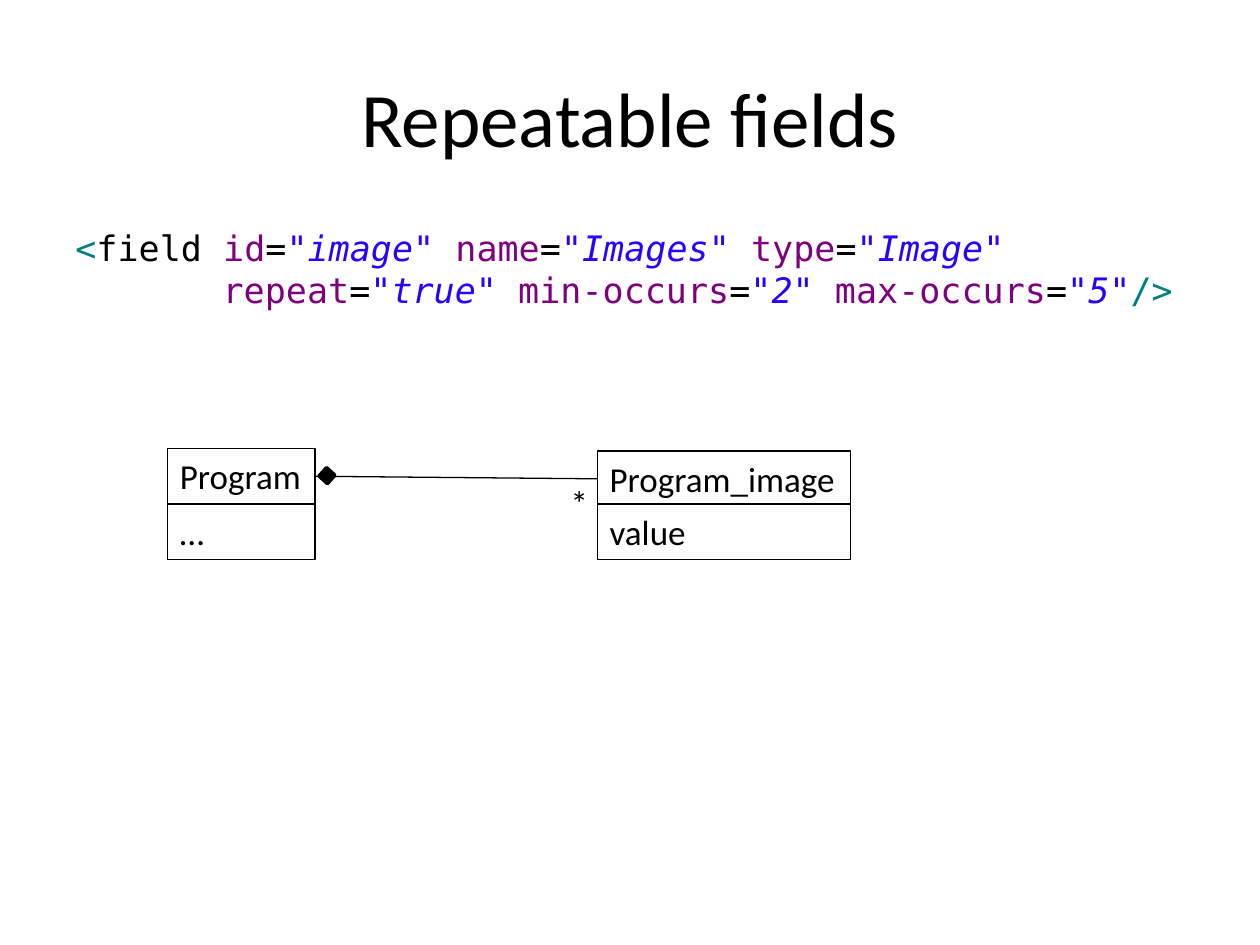
from pptx import Presentation
from pptx.dml.color import RGBColor
from pptx.enum.shapes import MSO_CONNECTOR, MSO_SHAPE
from pptx.enum.text import MSO_ANCHOR, PP_ALIGN
from pptx.oxml.ns import qn
from pptx.util import Inches, Pt
from lxml.etree import SubElement

TITLE = "Repeatable fields"
BLACK, TEAL, PURPLE, BLUE = "000000", "008080", "7F007F", "2A00FF"
SANS, MONO = "Calibri", "DejaVu Sans Mono"

# Code lines: opening runs, attributes, closing runs, indent in characters
CODE = [
    ([("<", TEAL), ("field ", BLACK)],
     [("id", "image"), ("name", "Images"), ("type", "Image")], [], 0),
    ([], [("repeat", "true"), ("min-occurs", "2"), ("max-occurs", "5")],
     [("/>", TEAL)], 7),
]
CHAR_W = 0.167  # width of one code character

# Entities: left, top, width, name, attribute
ENTITIES = [(1.33, 3.56, 1.17, "Program", "…"),
            (4.74, 3.58, 2.01, "Program_image", "value")]
ROW_H, ATTR_TOP = 0.44, 4


def rgb(hex_color):
    return RGBColor.from_string(hex_color)


def box(x, y, w, h):
    return [Inches(v) for v in (x, y, w, h)]


def set_font(p, size, name):
    p.font.size, p.font.name = Pt(size), name
    p.font.color.rgb = rgb(BLACK)


def write(shape, text, size=20, wrap=False, anchor=MSO_ANCHOR.TOP, align=PP_ALIGN.LEFT):
    tf = shape.text_frame
    tf.word_wrap, tf.vertical_anchor = wrap, anchor
    p = tf.paragraphs[0]
    p.text, p.alignment = text, align
    set_font(p, size, SANS)


def add_rect(x, y, w, h, fill, line_width):
    sp = s.shapes.add_shape(MSO_SHAPE.RECTANGLE, *box(x, y, w, h))
    sp.shadow.inherit = False
    sp.fill.solid()
    sp.fill.fore_color.rgb = rgb(fill)
    sp.line.color.rgb = rgb(BLACK)
    sp.line.width = Pt(line_width)
    return sp


prs = Presentation()
prs.slide_width, prs.slide_height = Inches(10), Inches(7.5)
s = prs.slides.add_slide(prs.slide_layouts[6])

# Title
title = s.shapes.add_textbox(*box(0.5, 0.3, 9, 1.25))
write(title, TITLE, 44, True, MSO_ANCHOR.MIDDLE, PP_ALIGN.CENTER)

# Code sample
tf = s.shapes.add_textbox(*box(0.5, 1.75, 9, 4.95)).text_frame
tf.word_wrap = True
for i, (opening, attrs, closing, indent) in enumerate(CODE):
    p = tf.add_paragraph() if i else tf.paragraphs[0]
    p.space_before = Pt(0 if i else 4)
    p._p.get_or_add_pPr().set("marL", str(Inches(indent * CHAR_W)))
    set_font(p, 20, MONO)
    runs = list(opening)
    for n, (name, value) in enumerate(attrs, 1):
        gap = " " if n < len(attrs) else ""
        runs += [(name, PURPLE), ("=", BLACK), (f'"{value}"{gap}', BLUE)]
    for text, color in runs + closing:
        r = p.add_run()
        r.text = text
        r.font.color.rgb = rgb(color)
        r.font.italic = color == BLUE

# Entity boxes
for x, y, w, name, attr in ENTITIES:
    write(add_rect(x, y, w, ROW_H, "FFFFFF", 0.75), name)
    write(add_rect(x, ATTR_TOP, w, ROW_H, "FFFFFF", 0.75), attr, wrap=True)

# Composition line, from the middle of one name box to the other
(x1, y1, w1, *_), (x2, y2, *_) = ENTITIES
line = s.shapes.add_connector(
    MSO_CONNECTOR.STRAIGHT, *box(x1 + w1, y1 + ROW_H / 2, x2, y2 + ROW_H / 2))
line.line.color.rgb = rgb(BLACK)
line.line.width = Pt(0.75)
SubElement(line._element.spPr, qn("a:effectLst"))

# Diamond and multiplicity
add_rect(2.55, 3.73, 0.09, 0.09, BLACK, 2).rotation = 42
write(s.shapes.add_textbox(*box(4.43, 3.77, 0.34, ROW_H)), "*")

prs.save("out.pptx")
